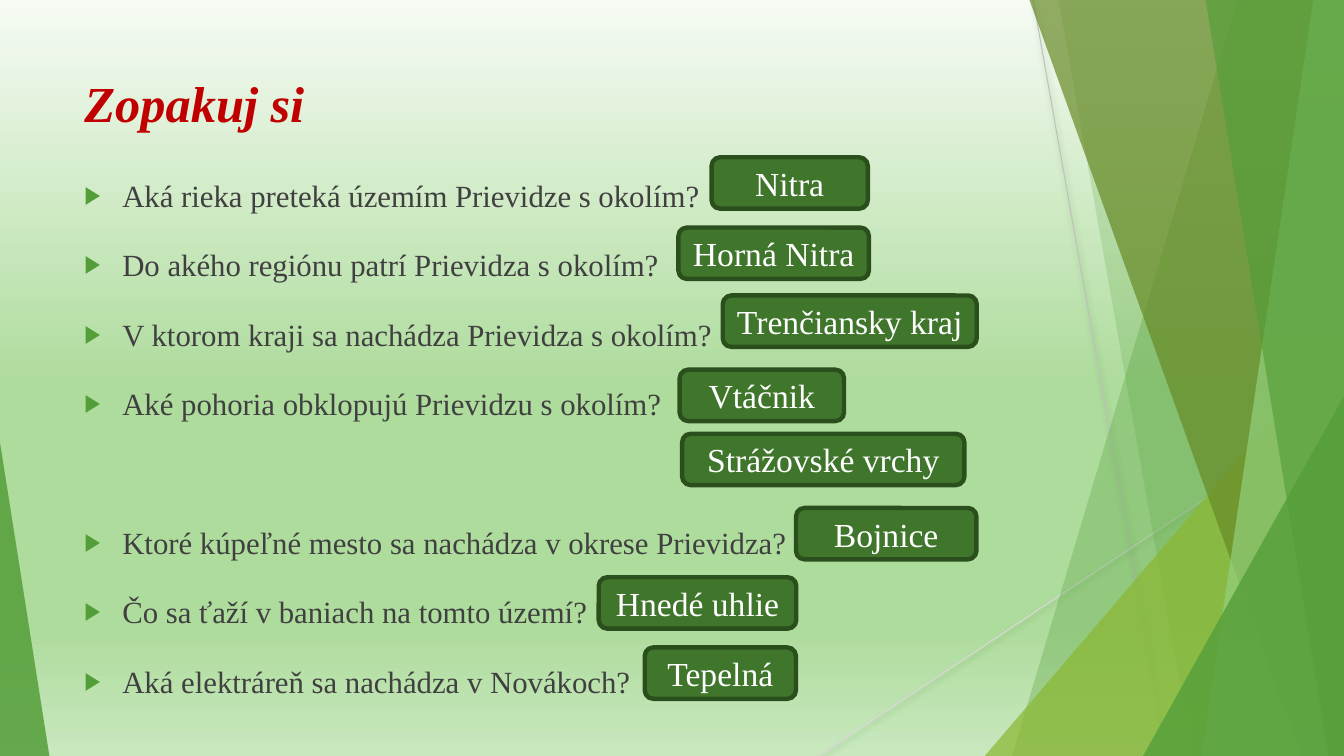
from lxml.etree import SubElement
from pptx import Presentation
from pptx.dml.color import RGBColor
from pptx.enum.shapes import MSO_CONNECTOR as CONN, MSO_SHAPE as SHAPE
from pptx.enum.text import MSO_ANCHOR as ANCHOR, PP_ALIGN as ALIGN
from pptx.oxml.ns import qn
from pptx.util import Pt

WIDTH, HEIGHT = 960, 540
FONT = "Times New Roman"
GREEN = RGBColor(0x54, 0x9E, 0x39)
LIME = RGBColor(0x8A, 0xB8, 0x33)
OLIVE = RGBColor(0x67, 0x8A, 0x26)
MINT = RGBColor(0x93, 0xD0, 0x7D)
SILVER = RGBColor(0xBF, 0xBF, 0xBF)
PALE = RGBColor(0xD9, 0xD9, 0xD9)
SHADOW = RGBColor(0x2B, 0x6D, 0x13)
RED = RGBColor(0xC0, 0x00, 0x00)
INK = RGBColor(0x40, 0x40, 0x40)
WHITE = RGBColor(0xFF, 0xFF, 0xFF)
ANSWER_FILL = RGBColor(0x3F, 0x76, 0x2B)
ANSWER_LINE = RGBColor(0x2A, 0x4F, 0x1C)

BACKGROUND = [(0, "F6FBF4"), (51, "AEDC9D"), (83, "AEDC9D"), (100, "C9E8BE")]

RAYS = [((738, 0, 833.76, 540), SILVER), ((960, 290.16, 584.64, 540), PALE)]
# Facets: a band is (top x, bottom x) up to the right edge,
# a triangle is (left, top, width, height, apex position)
FACETS = [
    ((884.16, 722.88), GREEN, 30),
    ((756, 851.76), GREEN, 20),
    ((703.44, 239.76, 256.56, 300.24, 1), LIME, 72),
    ((735.12, 929.52), OLIVE, 70),
    ((938.16, 858.24), MINT, 70),
    ((861.12, 948.96), GREEN, 65),
    ((816.48, 282.96, 143.52, 257.04, 1), GREEN, 80),
    ((0, 316.08, 35.28, 223.92, 0), GREEN, 85),
]

# Question and the space before it
QUESTIONS = [
    ("Aká rieka preteká územím Prievidze s okolím?", 0),
    ("Do akého regiónu patrí Prievidza s okolím?", 10),
    ("V ktorom kraji sa nachádza Prievidza s okolím?", 10),
    ("Aké pohoria obklopujú Prievidzu s okolím?", 10),
    ("Ktoré kúpeľné mesto sa nachádza v okrese Prievidza?", 59.6),
    ("Čo sa ťaží v baniach na tomto území?", 10),
    ("Aká elektráreň sa nachádza v Novákoch?", 10),
]
# Answer, offset from the body's corner, width
ANSWERS = [
    ("Nitra", 455, 2.9, 111.6),
    ("Horná Nitra", 431.3, 53.1, 136.1),
    ("Trenčiansky kraj", 463, 101.6, 181.4),
    ("Vtáčnik", 432.2, 154.6, 117.4),
    ("Strážovské vrchy", 434, 200.4, 201.6),
    ("Bojnice", 515.3, 253.4, 128.9),
    ("Hnedé uhlie", 374.4, 302.9, 141.1),
    ("Tepelná", 407.3, 353, 108),
]


def pts(*values):
    return [Pt(v) for v in values]


def set_font(font, color, **formats):
    font.color.rgb = color
    for name, value in {"name": FONT, **formats}.items():
        setattr(font, name, value)


def set_alpha(color_el, percent):
    SubElement(color_el, qn("a:alpha"), val=str(percent * 1000))


def add_background(slide):
    fill = slide.background.fill
    fill.gradient()
    fill.gradient_angle = 270
    stops = next(slide.element.iter(qn("a:gsLst")))
    for gs in list(stops):
        stops.remove(gs)
    for pos, color in BACKGROUND:
        gs = SubElement(stops, qn("a:gs"), pos=str(pos * 1000))
        SubElement(gs, qn("a:srgbClr"), val=color)


def add_ray(slide, ends, color):
    c = slide.shapes.add_connector(CONN.STRAIGHT, *pts(*ends))
    c.line.color.rgb = color
    c.line.width = Pt(0.75)
    effects = SubElement(c.element.spPr, qn("a:effectLst"))
    shadow = SubElement(effects, qn("a:outerShdw"), blurRad=str(Pt(4)),
                        dist=str(Pt(2)), dir="5400000", rotWithShape="0")
    set_alpha(SubElement(shadow, qn("a:srgbClr"), val=str(SHADOW)), 38)


def add_facet(slide, place, color, alpha):
    if len(place) == 2:
        top_x, bottom_x = place
        builder = slide.shapes.build_freeform(*pts(top_x, -0.72))
        corners = [(WIDTH, -0.72), (WIDTH, HEIGHT), (bottom_x, HEIGHT)]
        builder.add_line_segments([pts(*xy) for xy in corners], close=True)
        s = builder.convert_to_shape()
    else:
        *box, apex = place
        s = slide.shapes.add_shape(SHAPE.ISOSCELES_TRIANGLE, *pts(*box))
        s.adjustments[0] = apex
    s.shadow.inherit = False
    s.line.fill.background()
    s.fill.solid()
    s.fill.fore_color.rgb = color
    set_alpha(s.element.spPr.find(qn("a:solidFill"))[0], alpha)


def add_decor(slide):
    for ends, color in RAYS:
        add_ray(slide, ends, color)
    for facet in FACETS:
        add_facet(slide, *facet)


def add_title(slide, box):
    tf = slide.shapes.add_textbox(*pts(*box)).text_frame
    tf.word_wrap = True
    p = tf.paragraphs[0]
    p.text = "Zopakuj si"
    set_font(p.runs[0].font, RED, size=Pt(36), bold=True, italic=True)


def add_bullet(p):
    pPr = p._p.get_or_add_pPr()
    pPr.set("marL", str(Pt(27)))
    pPr.set("indent", str(Pt(-27)))
    SubElement(SubElement(pPr, qn("a:buClr")), qn("a:srgbClr"), val=str(GREEN))
    SubElement(pPr, qn("a:buSzPct"), val="80000")
    SubElement(pPr, qn("a:buFont"), typeface=FONT)
    SubElement(pPr, qn("a:buChar"), char="▶")


def add_questions(slide, box):
    tf = slide.shapes.add_textbox(*pts(*box)).text_frame
    tf.word_wrap = True
    for i, (question, gap) in enumerate(QUESTIONS):
        p = tf.add_paragraph() if i else tf.paragraphs[0]
        add_bullet(p)
        p.line_spacing = 1.5
        if gap:
            p.space_before = Pt(gap)
        r = p.add_run()
        r.text = question
        set_font(r.font, INK, size=Pt(22))


def add_answers(slide, box):
    left, top = box[:2]
    for answer, dx, dy, width in ANSWERS:
        s = slide.shapes.add_shape(SHAPE.ROUNDED_RECTANGLE,
                                   *pts(left + dx, top + dy, width, 36.7))
        s.shadow.inherit = False
        s.fill.solid()
        s.fill.fore_color.rgb = ANSWER_FILL
        s.line.color.rgb = ANSWER_LINE
        s.line.width = Pt(3.15)
        tf = s.text_frame
        tf.word_wrap = True
        tf.vertical_anchor = ANCHOR.MIDDLE
        p = tf.paragraphs[0]
        p.alignment = ALIGN.CENTER
        r = p.add_run()
        r.text = answer
        set_font(r.font, WHITE, size=Pt(24))


def main():
    prs = Presentation()
    prs.slide_width, prs.slide_height = pts(WIDTH, HEIGHT)
    slide = prs.slides.add_slide(prs.slide_layouts[6])
    body = (53.28, 109.44, 676.8, 406.8)
    add_background(slide)
    add_decor(slide)
    add_title(slide, (53.28, 48.24, 676.8, 103.68))
    add_questions(slide, body)
    add_answers(slide, body)
    prs.save("out.pptx")


if __name__ == "__main__":
    main()
